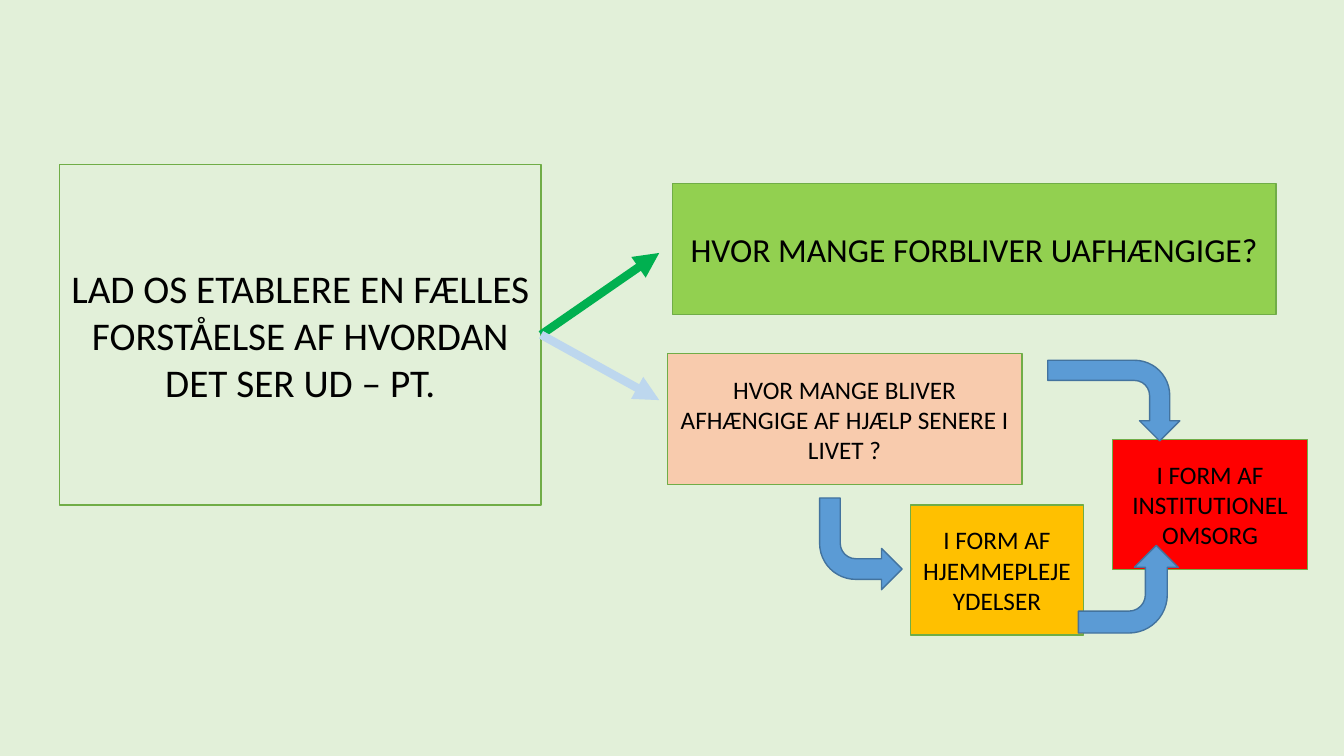
from dataclasses import dataclass
from typing import Optional

from lxml import etree
from pptx import Presentation
from pptx.dml.color import RGBColor
from pptx.enum.shapes import MSO_CONNECTOR, MSO_SHAPE
from pptx.enum.text import MSO_ANCHOR, PP_ALIGN
from pptx.oxml.ns import qn
from pptx.shapes.autoshape import Shape
from pptx.slide import Slide
from pptx.util import Pt

RECTANGLE = MSO_SHAPE.RECTANGLE
BENT_ARROW = MSO_SHAPE.BENT_ARROW
STRAIGHT = MSO_CONNECTOR.STRAIGHT
MIDDLE = MSO_ANCHOR.MIDDLE
CENTER = PP_ALIGN.CENTER
RIGHT_SIDE = 3
BLANK_LAYOUT = 6

FONT = "Calibri"
COLORS = {
    "background": "E2F0D9",
    "text": "000000",
    "box_line": "70AD47",
    "independent": "92D050",
    "dependent": "F8CBAD",
    "home_care": "FFC000",
    "institution": "FF0000",
    "bent_fill": "5B9BD5",
    "bent_line": "43739E",
    "green_arrow": "00B050",
    "blue_arrow": "BDD7EE",
}


@dataclass(frozen=True)
class Box:
    text: str
    left: float
    top: float
    width: float
    height: float
    size: int
    fill: Optional[str] = None


@dataclass(frozen=True)
class BentArrow:
    left: float
    top: float
    width: float
    height: float
    rotation: int
    flips: tuple[str, ...]


@dataclass(frozen=True)
class Branch:
    end_x: float
    end_y: float
    color: str


QUESTION = Box("LAD OS ETABLERE EN FÆLLES FORSTÅELSE AF HVORDAN DET SER UD – PT.",
               42.3, 117.4, 344.2, 243.4, 28)
ANSWERS = [
    Box("HVOR MANGE FORBLIVER UAFHÆNGIGE?",
        480.2, 131, 431.3, 93.6, 24, "independent"),
    Box("HVOR MANGE BLIVER AFHÆNGIGE AF HJÆLP SENERE I LIVET ?",
        476.6, 252.7, 253.4, 93.6, 18, "dependent"),
    Box("I FORM AF HJEMMEPLEJE YDELSER",
        650.2, 360.7, 123.8, 92.9, 18, "home_care"),
    Box("I FORM AF INSTITUTIONEL OMSORG",
        794.9, 313.9, 139, 92.9, 18, "institution"),
]
CARE_ARROWS = [
    BentArrow(585.4, 355.7, 59, 65.5, 180, ("flipH",)),
    BentArrow(774.7, 385.2, 62.6, 71.3, 90, ("flipH",)),
    BentArrow(766.8, 239, 57.6, 94.3, 270, ("flipH", "flipV")),
]
BRANCHES = [
    Branch(470.9, 180.7, "green_arrow"),
    Branch(470.9, 285.8, "blue_arrow"),
]


def rgb(name: str) -> RGBColor:
    return RGBColor.from_string(COLORS[name])


def style_shape(shape: Shape, fill: Optional[str], line: str) -> None:
    shape.shadow.inherit = False
    if fill:
        shape.fill.solid()
        shape.fill.fore_color.rgb = rgb(fill)
    else:
        shape.fill.background()
    shape.line.color.rgb = rgb(line)
    shape.line.width = Pt(1)


def add_box(slide: Slide, box: Box) -> Shape:
    shape = slide.shapes.add_shape(RECTANGLE, Pt(box.left), Pt(box.top),
                                   Pt(box.width), Pt(box.height))
    style_shape(shape, box.fill, "box_line")
    frame = shape.text_frame
    frame.word_wrap = True
    frame.vertical_anchor = MIDDLE
    paragraph = frame.paragraphs[0]
    paragraph.alignment = CENTER
    run = paragraph.add_run()
    run.text = box.text
    run.font.name = FONT
    run.font.size = Pt(box.size)
    run.font.color.rgb = rgb("text")
    return shape


def add_bent_arrow(slide: Slide, arrow: BentArrow) -> None:
    shape = slide.shapes.add_shape(BENT_ARROW, Pt(arrow.left), Pt(arrow.top),
                                   Pt(arrow.width), Pt(arrow.height))
    style_shape(shape, "bent_fill", "bent_line")
    shape.rotation = arrow.rotation
    # Mirroring is set on the transform
    for flip in arrow.flips:
        shape.element.spPr.xfrm.set(flip, "1")


def add_branch(slide: Slide, source: Shape, branch: Branch) -> None:
    connector = slide.shapes.add_connector(
        STRAIGHT, source.left + source.width, source.top + source.height // 2,
        Pt(branch.end_x), Pt(branch.end_y))
    connector.begin_connect(source, RIGHT_SIDE)
    connector.line.color.rgb = rgb(branch.color)
    connector.line.width = Pt(6)
    # Arrowhead and no shadow
    properties = connector.element.spPr
    etree.SubElement(properties.find(qn("a:ln")), qn("a:tailEnd"), type="triangle")
    etree.SubElement(properties, qn("a:effectLst"))


def main() -> None:
    presentation = Presentation()
    presentation.slide_width = Pt(960)
    presentation.slide_height = Pt(540)
    slide = presentation.slides.add_slide(presentation.slide_layouts[BLANK_LAYOUT])
    slide.background.fill.solid()
    slide.background.fill.fore_color.rgb = rgb("background")

    # Question and answers
    question = add_box(slide, QUESTION)
    for answer in ANSWERS:
        add_box(slide, answer)

    # Paths between the kinds of care
    for care_arrow in CARE_ARROWS:
        add_bent_arrow(slide, care_arrow)

    # Branches from the question
    for branch in BRANCHES:
        add_branch(slide, question, branch)

    presentation.save("out.pptx")


if __name__ == "__main__":
    main()
